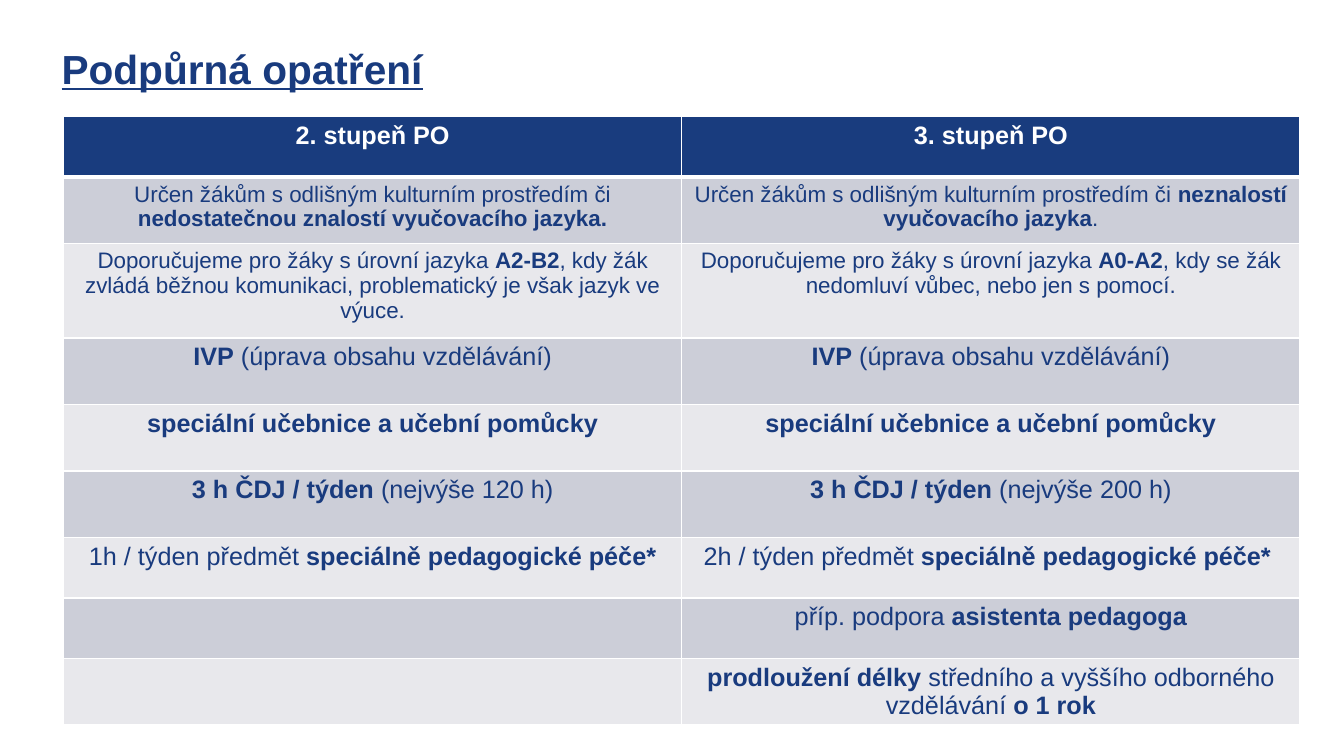
from lxml.etree import SubElement
from pptx import Presentation
from pptx.dml.color import RGBColor
from pptx.enum.text import MSO_ANCHOR as Anchor, MSO_AUTO_SIZE as AutoSize, PP_ALIGN as Align
from pptx.oxml.ns import qn
from pptx.util import Inches, Pt

COLORS = {"header": "193C7E", "text": "193B7E", "white": "FFFFFF",
          "dark_band": "CCCED8", "light_band": "E8E8EC"}

deck = Presentation()
deck.slide_width, deck.slide_height = Inches(13.33), Inches(7.5)
across = deck.slide_width / 100  # one percent of the slide's width
down = deck.slide_height / 100   # one percent of the slide's height


def write(paragraph, text, size, color="text", align=Align.CENTER, underline=None):
    """Fill a paragraph; parts between bars are bold."""
    paragraph.alignment = align
    for i, part in enumerate(text.split("|")):
        if part:
            run = paragraph.add_run()
            run.text = part
            run.font.name = "Arial"
            run.font.size = Pt(size)
            run.font.bold = i % 2 == 1
            run.font.underline = underline
            run.font.color.rgb = RGBColor.from_string(COLORS[color])


def add_border(cell, side, width):
    line = SubElement(cell._tc.get_or_add_tcPr(), qn(f"a:ln{side}"), w=str(Pt(width)))
    SubElement(SubElement(line, qn("a:solidFill")), qn("a:srgbClr"), val=COLORS["white"])


# Title
slide = deck.slides.add_slide(deck.slide_layouts[5])
title = slide.shapes.title
title.left, title.top = int(3.83 * across), int(5.2 * down)
title.width, title.height = int(93.7 * across), int(21.2 * down)
title.text_frame.vertical_anchor = Anchor.TOP
title.text_frame.auto_size = AutoSize.NONE
title.text_frame.word_wrap = True
write(title.text_frame.paragraphs[0], "|Podpůrná opatření|", 29,
      align=Align.LEFT, underline=True)

# Support measures: row height in percent, text size, 2nd level, 3rd level
measures = [
    (8, 18, "|2. stupeň PO|", "|3. stupeň PO|"),
    (8.8, 16,
     "Určen žákům s odlišným kulturním prostředím či |nedostatečnou znalostí vyučovacího jazyka.|",
     "Určen žákům s odlišným kulturním prostředím či |neznalostí vyučovacího jazyka|."),
    (12.5, 16,
     "Doporučujeme pro žáky s úrovní jazyka |A2-B2|, kdy žák zvládá běžnou komunikaci, "
     "problematický je však jazyk ve výuce.",
     "Doporučujeme pro žáky s úrovní jazyka |A0-A2|, kdy se žák nedomluví vůbec, "
     "nebo jen s pomocí."),
    (8.8, 18, "|IVP| (úprava obsahu vzdělávání)", "|IVP| (úprava obsahu vzdělávání)"),
    (8.8, 18, "|speciální učebnice a učební pomůcky|", "|speciální učebnice a učební pomůcky|"),
    (8.8, 18, "|3 h ČDJ / týden| (nejvýše 120 h)", "|3 h ČDJ / týden| (nejvýše 200 h)"),
    (8, 18, "1h / týden předmět |speciálně pedagogické péče*|",
     "2h / týden předmět |speciálně pedagogické péče* |"),
    (8, 18, "", "příp. podpora |asistenta pedagoga|"),
    (8.8, 18, "",
     "|prodloužení délky| středního a vyššího odborného vzdělávání |o 1 rok|"),
]

# Table
total_height = sum(measure[0] for measure in measures)
table = slide.shapes.add_table(
    len(measures), 2, int(4.73 * across), int(15.4 * down),
    int(92 * across), int(total_height * down)).table

for r, (height, size, *levels) in enumerate(measures):
    table.rows[r].height = int(height * down)
    band = "header" if r == 0 else "dark_band" if r % 2 else "light_band"
    for c, text in enumerate(levels):
        cell = table.cell(r, c)
        for side in "LRTB":
            under_header = (r, side) in [(0, "B"), (1, "T")]
            add_border(cell, side, 3 if under_header else 1)
        cell.fill.solid()
        cell.fill.fore_color.rgb = RGBColor.from_string(COLORS[band])
        write(cell.text_frame.paragraphs[0], text, size, "white" if r == 0 else "text")

deck.save("out.pptx")
